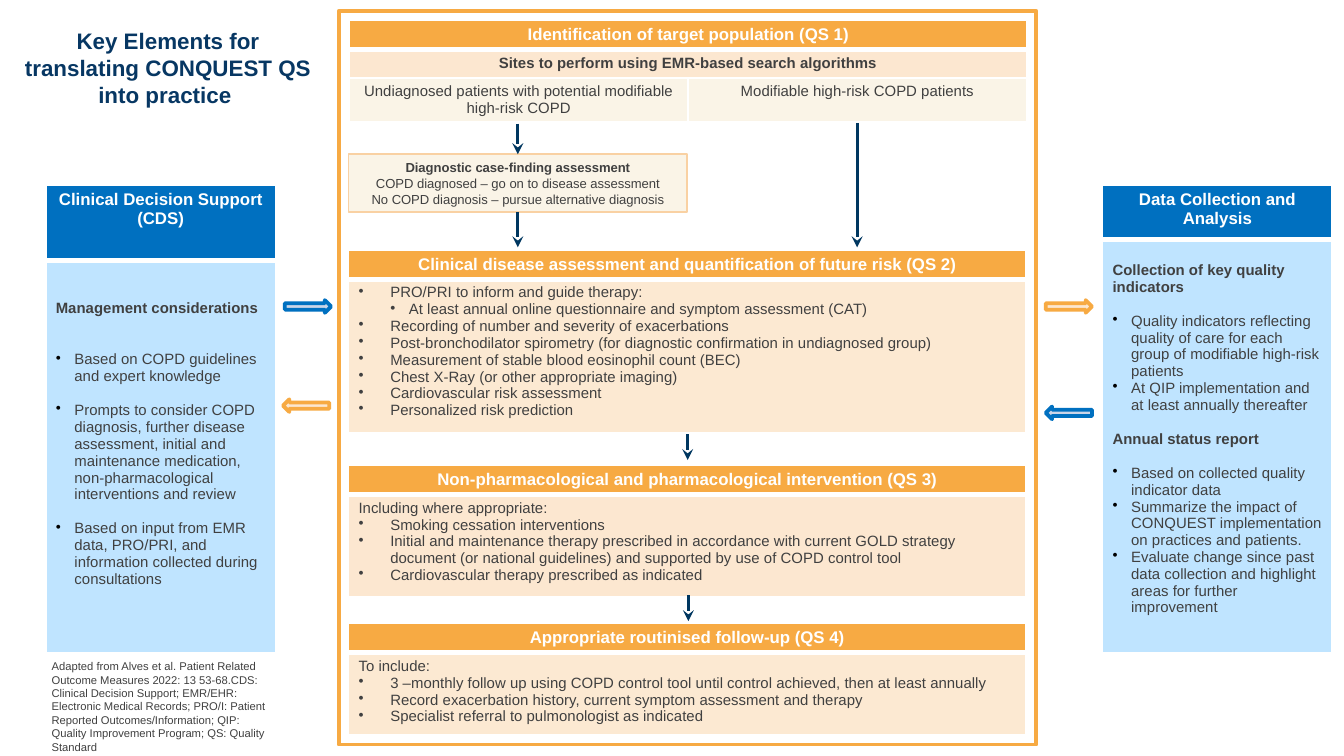
from lxml.etree import SubElement
from pptx import Presentation
from pptx.dml.color import RGBColor
from pptx.enum.shapes import MSO_CONNECTOR, MSO_SHAPE
from pptx.enum.text import MSO_ANCHOR, MSO_AUTO_SIZE, PP_ALIGN
from pptx.oxml.ns import qn
from pptx.util import Pt

ORANGE, PEACH, SAND, CREAM = "F7AA43", "FCE7D0", "FCE9D2", "FAF4E7"
BLUE, SKY, PALE = "0070C0", "BFE4FF", "CBD5E8"
NAVY, INK, GRAY, WHITE = "003760", "073763", "404040", "FFFFFF"
LINE = 9.2  # height of one 8 pt line
PAD = {"margin_left": Pt(5.4), "margin_right": Pt(5.4),
       "margin_top": Pt(2.7), "margin_bottom": Pt(2.7)}
HEAD = {"size": 9, "color": WHITE, "bold": True}
BODY = {"size": 8, "color": GRAY, "bold": False}
STRONG = {**BODY, "bold": True}

# Paragraph kinds: left indent, hanging indent, bullet colour, text format
KINDS = {
    "text": (0, 0, None, BODY),
    "strong": (0, 0, None, STRONG),
    "item": (17, 17, GRAY, BODY),
    "sub": (27, 10, GRAY, BODY),
    "side": (10, 10, "000000", BODY),
}

RISK = [
    ("item", "PRO/PRI to inform and guide therapy:"),
    ("sub", "At least annual online questionnaire and symptom assessment (CAT)"),
    ("item", "Recording of number and severity of exacerbations"),
    ("item", "Post-bronchodilator spirometry (for diagnostic confirmation in undiagnosed group)"),
    ("item", "Measurement of stable blood eosinophil count (BEC)"),
    ("item", "Chest X-Ray (or other appropriate imaging)"),
    ("item", "Cardiovascular risk assessment"),
    ("item", "Personalized risk prediction"),
]
CARE = [
    ("text", "Including where appropriate:"),
    ("item", "Smoking cessation interventions"),
    ("item", "Initial and maintenance therapy prescribed in accordance with current GOLD strategy "
             "document (or national guidelines) and supported by use of COPD control tool"),
    ("item", "Cardiovascular therapy prescribed as indicated"),
]
FOLLOW = [
    ("text", "To include:"),
    ("item", "3 –monthly follow up using COPD control tool until control achieved, then at least annually"),
    ("item", "Record exacerbation history, current symptom assessment and therapy"),
    ("item", "Specialist referral to pulmonologist as indicated"),
]
# The third value is the gap above, in lines
SUPPORT = [
    ("strong", "Management considerations"),
    ("side", "Based on COPD guidelines and expert knowledge", 2),
    ("side", "Prompts to consider COPD diagnosis, further disease assessment, initial and "
             "maintenance medication, non-pharmacological interventions and review", 1),
    ("side", "Based on input from EMR data, PRO/PRI, and information collected during consultations", 1),
]
DATA = [
    ("strong", "Collection of key quality indicators"),
    ("side", "Quality indicators reflecting quality of care for each group of modifiable "
             "high-risk patients", 1),
    ("side", "At QIP implementation and at least annually thereafter"),
    ("strong", "Annual status report", 1),
    ("side", "Based on collected quality indicator data", 1),
    ("side", "Summarize the impact of CONQUEST implementation on practices and patients."),
    ("side", "Evaluate change since past data collection and highlight areas for further improvement"),
]
NOTE = ("Adapted from Alves et al. Patient Related Outcome Measures 2022: 13 53-68.CDS: "
        "Clinical Decision Support; EMR/EHR: Electronic Medical Records; PRO/I: Patient "
        "Reported Outcomes/Information; QIP: Quality Improvement Program; QS: Quality Standard")


def rgb(code):
    return RGBColor.from_string(code)


def assign(obj, values):
    for name, value in values.items():
        setattr(obj, name, value)


def write(para, text, look, align=PP_ALIGN.LEFT):
    para.alignment = align
    run = para.add_run()
    run.text = text
    assign(run.font, {"name": "Arial", "size": Pt(look["size"]), "bold": look["bold"]})
    run.font.color.rgb = rgb(look["color"])


def paras(frame, count):
    return [frame.paragraphs[0]] + [frame.add_paragraph() for _ in range(count - 1)]


def fill_list(frame, items):
    for para, (kind, text, *gap) in zip(paras(frame, len(items)), items):
        left, hang, dot, look = KINDS[kind]
        if dot:
            props = para._p.get_or_add_pPr()
            props.set("marL", str(Pt(left)))
            props.set("indent", str(-Pt(hang)))
            SubElement(SubElement(props, qn("a:buClr")), qn("a:srgbClr"), val=dot)
            SubElement(props, qn("a:buChar"), char="•")
        para.space_before = Pt(LINE * gap[0] if gap else 0)
        write(para, text, look)


def paint(cell, color, base=1):
    """White borders, then the fill; base is the width of the bottom border."""
    assign(cell, PAD)
    props = cell._tc.get_or_add_tcPr()
    for side, width in (("L", 1), ("R", 1), ("T", 1), ("B", base)):
        line = SubElement(props, qn("a:ln" + side), w=str(Pt(width)))
        SubElement(SubElement(line, qn("a:solidFill")), qn("a:srgbClr"), val=WHITE)
    cell.fill.solid()
    cell.fill.fore_color.rgb = rgb(color)


def grid(slide, box, rows, cols=1):
    x, y, w = box
    table = slide.shapes.add_table(len(rows), cols, Pt(x), Pt(y), Pt(w), Pt(sum(rows))).table
    assign(table, {"first_row": False, "horz_banding": False})
    for row, height in zip(table.rows, rows):
        row.height = Pt(height)
    return table


def panel(slide, box, rows, title, items, colors, lead=0):
    """A header row over a list; lead is the blank space above the list."""
    table = grid(slide, box, rows)
    top, body = table.cell(0, 0), table.cell(1, 0)
    paint(top, colors[0], 3)
    write(top.text_frame.paragraphs[0], title, HEAD, PP_ALIGN.CENTER)
    paint(body, colors[1])
    body.margin_top = Pt(2.7 + lead * LINE)
    fill_list(body.text_frame, items)


def target(slide, box):
    table = grid(slide, box, (15.75, 15.1, 23.8), 2)
    rows = (
        (ORANGE, HEAD, 3, ["Identification of target population (QS 1)"]),
        (PEACH, STRONG, 1, ["Sites to perform using EMR-based search algorithms"]),
        (CREAM, BODY, 1, ["Undiagnosed patients with potential modifiable high-risk COPD",
                          "Modifiable high-risk COPD patients"]),
    )
    for r, (color, look, base, texts) in enumerate(rows):
        for c in range(2):
            paint(table.cell(r, c), color, base)
        if len(texts) == 1:
            table.cell(r, 0).merge(table.cell(r, 1))
        for c, text in enumerate(texts):
            write(table.cell(r, c).text_frame.paragraphs[0], text, look, PP_ALIGN.CENTER)


def block(slide, box, line, width, fill=None, kind=MSO_SHAPE.RECTANGLE):
    shape = slide.shapes.add_shape(kind, *map(Pt, box))
    shape.shadow.inherit = False
    if fill:
        shape.fill.solid()
        shape.fill.fore_color.rgb = rgb(fill)
    else:
        shape.fill.background()
    shape.line.color.rgb = rgb(line)
    shape.line.width = Pt(width)
    return shape


def finding(slide, box):
    shape = block(slide, box, "F9D1A3", 1, CREAM)
    frame = shape.text_frame
    assign(frame, {**PAD, "word_wrap": True, "vertical_anchor": MSO_ANCHOR.MIDDLE})
    texts = ("Diagnostic case-finding assessment",
             "COPD diagnosed – go on to disease assessment",
             "No COPD diagnosis – pursue alternative diagnosis")
    for i, (para, text) in enumerate(zip(paras(frame, 3), texts)):
        write(para, text, {"size": 7, "color": GRAY, "bold": i == 0}, PP_ALIGN.CENTER)
    return shape


def arrow(slide, x, top, end):
    link = slide.shapes.add_connector(MSO_CONNECTOR.STRAIGHT, Pt(x), Pt(top), Pt(x), Pt(end))
    link.line.color.rgb = rgb(NAVY)
    link.line.width = Pt(1.5)
    SubElement(link.line._get_or_add_ln(), qn("a:tailEnd"), type="stealth")
    SubElement(link._element.spPr, qn("a:effectLst"))
    return link


def heading(slide, box):
    title = slide.shapes.title
    assign(title, dict(zip(("left", "top", "width", "height"), map(Pt, box))))
    frame = title.text_frame
    assign(frame, {**dict.fromkeys(PAD, Pt(7.2)), "word_wrap": True,
                   "auto_size": MSO_AUTO_SIZE.NONE, "vertical_anchor": MSO_ANCHOR.TOP})
    write(frame.paragraphs[0], "Key Elements for translating CONQUEST QS into practice ",
          {"size": 12, "color": INK, "bold": True}, PP_ALIGN.CENTER)


def source(slide, box):
    frame = slide.shapes.add_textbox(*map(Pt, box)).text_frame
    assign(frame, {**PAD, "word_wrap": True})
    write(frame.paragraphs[0], NOTE, {"size": 6, "color": GRAY, "bold": False})


def main():
    deck = Presentation()
    assign(deck, {"slide_width": Pt(720), "slide_height": Pt(405)})
    slide = deck.slides.add_slide(deck.slide_layouts[5])
    heading(slide, (4.3, 7.2, 171.4, 58.3))

    # Central pathway
    block(slide, (181.5, 5.8, 373.7, 393.1), ORANGE, 2)
    target(slide, (187.2, 10.9, 362.9))
    case = finding(slide, (186.7, 82.6, 181.4, 31.2))
    steps = (
        (133.9, 82.2, "Clinical disease assessment and quantification of future risk (QS 2)", RISK, SAND),
        (249.2, 54.7, "Non-pharmacological and pharmacological intervention (QS 3)", CARE, PEACH),
        (334, 44, "Appropriate routinised follow-up (QS 4)", FOLLOW, SAND),
    )
    for y, height, title, items, color in steps:
        panel(slide, (186.7, y, 362.7), (15.75, height), title, items, (ORANGE, color))

    # Flow arrows
    arrow(slide, 277.4, 66.2, 82.6).end_connect(case, 0)
    arrow(slide, 277.4, 113.8, 132.5).begin_connect(case, 2)
    for x, top, end in ((459.2, 65.8, 132.5), (368.4, 232.6, 246.5), (368.8, 319, 332.8)):
        arrow(slide, x, top, end)

    # Side panels
    panel(slide, (24.5, 99.4, 123.1), (40.3, 210.2), "Clinical Decision Support (CDS)",
          SUPPORT, (BLUE, SKY), 2)
    panel(slide, (590.6, 99.4, 123.1), (29, 221.5), "Data Collection and Analysis",
          DATA, (BLUE, SKY), 1)

    # Exchange arrows
    for x, y, line, fill, turn in ((152.6, 160.8, BLUE, PALE, 0), (560.2, 217.8, BLUE, PALE, 180),
                                   (560.2, 160.8, ORANGE, PEACH, 0), (151.6, 213.9, ORANGE, PEACH, 180)):
        block(slide, (x, y, 24.8, 6.8), line, 2, fill, MSO_SHAPE.RIGHT_ARROW).rotation = turn

    source(slide, (22.3, 350.6, 127.4, 56))
    deck.save("out.pptx")


if __name__ == "__main__":
    main()
